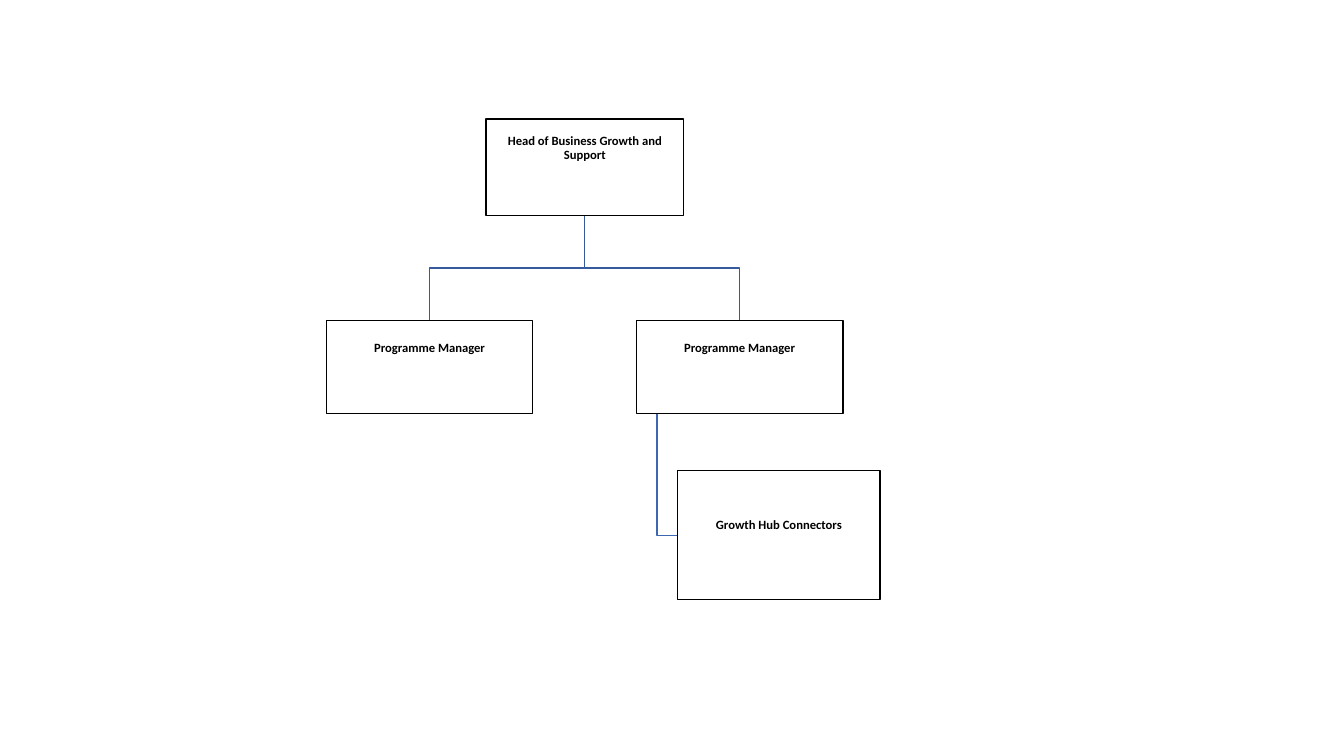
from dataclasses import dataclass

import pptx
import pptx.dml.color
import pptx.enum.shapes
import pptx.enum.text
import pptx.shapes.autoshape
import pptx.shapes.shapetree
import pptx.util

SLIDE_WIDTH = pptx.util.Inches(13.33)
SLIDE_HEIGHT = pptx.util.Inches(7.5)

Point = tuple[float, float]


@dataclass(frozen=True)
class Theme:
    ink: str = "000000"
    upper_branch: str = "365B9D"
    lower_branch: str = "3E67B2"
    font: str = "Calibri"
    text_size: float = 9
    line_width: float = 1
    line_spacing: float = 0.9
    margin: float = 0.01


@dataclass(frozen=True)
class Role:
    """An organisation box; lengths are percentages of the slide's size."""
    title: str
    left: float
    top: float
    width: float
    height: float
    text_drop: float

    @property
    def center(self) -> float:
        return self.left + self.width / 2

    @property
    def middle(self) -> float:
        return self.top + self.height / 2

    @property
    def bottom(self) -> float:
        return self.top + self.height


THEME = Theme()
HEAD = Role("Head of Business Growth and Support", 36.16, 15.73, 14.7, 12.8, 2.13)
LEFT_MANAGER = Role("Programme Manager", 24.31, 42.4, 15.3, 12.27, 2.8)
RIGHT_MANAGER = Role("Programme Manager", 47.34, 42.4, 15.38, 12.27, 2.8)
CONNECTORS = Role("Growth Hub Connectors", 50.41, 62.27, 15.08, 17.07, 6.4)


def across(percent: float) -> int:
    return round(SLIDE_WIDTH * percent / 100)


def down(percent: float) -> int:
    return round(SLIDE_HEIGHT * percent / 100)


def outline(shape: pptx.shapes.autoshape.Shape, color: str) -> None:
    shape.shadow.inherit = False
    shape.fill.background()
    shape.line.color.rgb = pptx.dml.color.RGBColor.from_string(color)
    shape.line.width = pptx.util.Pt(THEME.line_width)


def draw_branch(shapes: pptx.shapes.shapetree.SlideShapes,
                points: list[Point], color: str) -> None:
    start, *rest = [(across(x), down(y)) for x, y in points]
    builder = shapes.build_freeform(*start)
    builder.add_line_segments(rest, close=False)
    outline(builder.convert_to_shape(), color)


def branch_from_head(manager: Role) -> list[Point]:
    halfway = (HEAD.bottom + manager.top) / 2
    return [(HEAD.center, HEAD.bottom), (HEAD.center, halfway),
            (manager.center, halfway), (manager.center, manager.top)]


def branch_to_side(manager: Role, report: Role) -> list[Point]:
    stem = manager.left + manager.width / 10
    return [(stem, manager.bottom), (stem, report.middle),
            (report.left, report.middle)]


def draw_role(shapes: pptx.shapes.shapetree.SlideShapes, role: Role) -> None:
    box = shapes.add_shape(
        pptx.enum.shapes.MSO_SHAPE.RECTANGLE, across(role.left), down(role.top),
        across(role.width), down(role.height))
    outline(box, THEME.ink)

    frame = box.text_frame
    frame.word_wrap = True
    frame.vertical_anchor = pptx.enum.text.MSO_ANCHOR.TOP
    frame.margin_left = frame.margin_right = pptx.util.Inches(THEME.margin)
    frame.margin_top = down(role.text_drop)
    frame.margin_bottom = pptx.util.Inches(THEME.margin)

    para = frame.paragraphs[0]
    para.alignment = pptx.enum.text.PP_ALIGN.CENTER
    para.line_spacing = THEME.line_spacing
    span = para.add_run()
    span.text = role.title
    span.font.name = THEME.font
    span.font.size = pptx.util.Pt(THEME.text_size)
    span.font.bold = True
    span.font.color.rgb = pptx.dml.color.RGBColor.from_string(THEME.ink)


def main() -> None:
    deck = pptx.Presentation()
    deck.slide_width = SLIDE_WIDTH
    deck.slide_height = SLIDE_HEIGHT
    page = deck.slides.add_slide(deck.slide_layouts.get_by_name("Blank"))

    draw_branch(page.shapes, branch_to_side(RIGHT_MANAGER, CONNECTORS),
                THEME.lower_branch)
    for manager in (RIGHT_MANAGER, LEFT_MANAGER):
        draw_branch(page.shapes, branch_from_head(manager), THEME.upper_branch)
    for role in (HEAD, LEFT_MANAGER, RIGHT_MANAGER, CONNECTORS):
        draw_role(page.shapes, role)

    deck.save("out.pptx")


if __name__ == "__main__":
    main()
